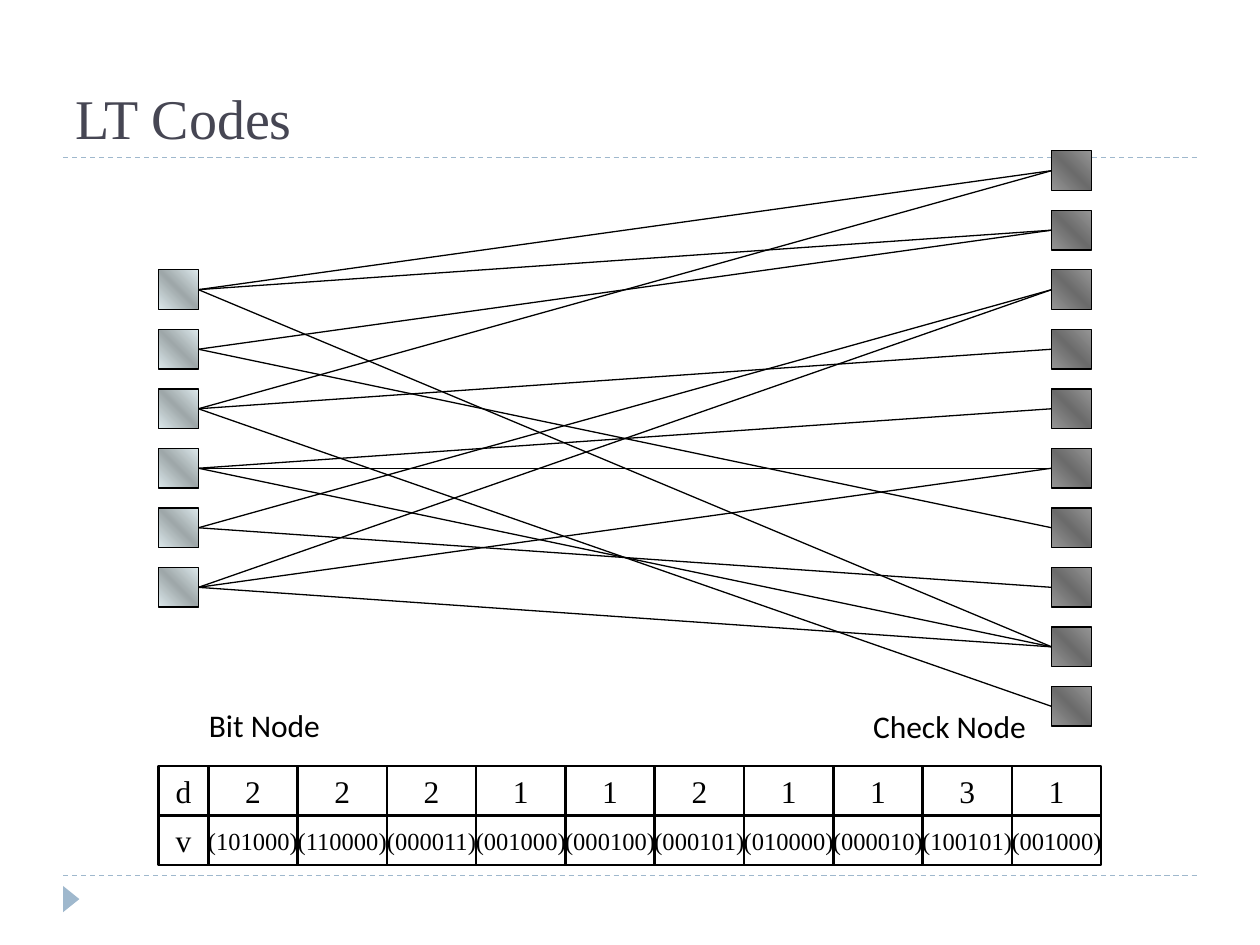
"""Build the LT Codes slide: a bipartite graph and the table that defines its edges."""
import copy

import lxml.etree
import pptx
import pptx.dml.color
import pptx.enum.dml
import pptx.enum.shapes
import pptx.enum.text
import pptx.oxml.ns
import pptx.util

Cm = pptx.util.Cm
Pt = pptx.util.Pt
RGBColor = pptx.dml.color.RGBColor
Shape = pptx.enum.shapes.MSO_SHAPE
Anchor = pptx.enum.text.MSO_ANCHOR
Align = pptx.enum.text.PP_ALIGN

BLACK = RGBColor(0x00, 0x00, 0x00)
TITLE_COLOR = RGBColor(0x46, 0x46, 0x53)
ACCENT = RGBColor(0x9F, 0xB8, 0xCD)
BIT_LIGHT = RGBColor(0xDD, 0xE9, 0xEC)
BIT_DARK = RGBColor(0x9E, 0xA7, 0xA9)
CHECK_LIGHT = RGBColor(0x96, 0x96, 0x96)
CHECK_DARK = RGBColor(0x6B, 0x6B, 0x6B)

SERIF = "Times New Roman"
SANS = "Calibri"

VECTORS = ["101000", "110000", "000011", "001000", "000100",
           "000101", "010000", "000010", "100101", "001000"]
BIT_COUNT = len(VECTORS[0])

BIT_LEFT, CHECK_LEFT = 3.2, 21.2
CHECK_TOP, NODE_PITCH, NODE_SIZE = 3.04, 1.2, 0.8
BIT_TOP = CHECK_TOP + (len(VECTORS) - BIT_COUNT) / 2 * NODE_PITCH
TABLE_TOP, ROW_HEIGHT = 15.44, 1.0
HEAD_WIDTH, COLUMN_WIDTH = 1.0, 1.8


def write_text(shape, text, size, font, color, align, anchor):
    """Put one formatted paragraph into a shape."""
    frame = shape.text_frame
    frame.word_wrap = False
    frame.vertical_anchor = anchor
    para = frame.paragraphs[0]
    para.text = text
    para.alignment = align
    para.font.size = Pt(size)
    para.font.name = font
    para.font.color.rgb = color


def add_label(page, left, top, width, height, text, size=18, font=SANS,
              color=BLACK, anchor=Anchor.TOP):
    """Add a left-aligned text box."""
    box = page.shapes.add_textbox(Cm(left), Cm(top), Cm(width), Cm(height))
    write_text(box, text, size, font, color, Align.LEFT, anchor)


def add_line(page, start=(0, 0), end=(0, 0), color=BLACK):
    """Add a thin straight connector without shadow."""
    ends = [Cm(value) for value in (*start, *end)]
    line = page.shapes.add_connector(pptx.enum.shapes.MSO_CONNECTOR.STRAIGHT, *ends)
    line.line.color.rgb = color
    line.line.width = Pt(0.75)
    lxml.etree.SubElement(line._element.spPr, pptx.oxml.ns.qn("a:effectLst"))
    return line


def add_rule(page, top):
    """Add a dashed horizontal rule across the page."""
    rule = add_line(page, (1.27, top), (24.13, top), ACCENT)
    rule.line.dash_style = pptx.enum.dml.MSO_LINE.DASH


def add_node(page, left, top, light, dark):
    """Add a square node with a dark diagonal band."""
    node = page.shapes.add_shape(Shape.RECTANGLE, Cm(left), Cm(top),
                                 Cm(NODE_SIZE), Cm(NODE_SIZE))
    node.shadow.inherit = False
    node.line.color.rgb = BLACK
    node.line.width = Pt(0.75)
    node.fill.gradient()
    node.fill.gradient_angle = 45
    stops = node._element.spPr.find(".//" + pptx.oxml.ns.qn("a:gsLst"))
    stops.append(copy.deepcopy(stops[0]))
    for stop, position, color in zip(node.fill.gradient_stops, (0, 0.5, 1),
                                     (light, dark, light)):
        stop.position = position
        stop.color.rgb = color
    return node


def add_nodes(page, count, left, top, light, dark):
    """Add a column of evenly spaced nodes."""
    return [add_node(page, left, top + row * NODE_PITCH, light, dark)
            for row in range(count)]


def add_edges(page, bits, checks):
    """Join each check node to the bits that are set in its vector."""
    for check, vector in zip(checks, VECTORS):
        for bit, flag in zip(bits, vector):
            if flag == "1":
                edge = add_line(page)
                edge.begin_connect(bit, 3)
                edge.end_connect(check, 1)


def add_cell(page, left, row, width, text, size=18):
    """Add one outlined cell whose text may reach its borders."""
    cell = page.shapes.add_shape(Shape.RECTANGLE, Cm(left), Cm(TABLE_TOP + row * ROW_HEIGHT),
                                 Cm(width), Cm(ROW_HEIGHT))
    cell.shadow.inherit = False
    cell.fill.background()
    cell.line.color.rgb = BLACK
    cell.line.width = Pt(1.5)
    write_text(cell, text, size, SERIF, BLACK, Align.CENTER, Anchor.MIDDLE)


def add_code_table(page):
    """Add the degree and vector rows."""
    for row, head in enumerate("dv"):
        add_cell(page, BIT_LEFT, row, HEAD_WIDTH, head)
    for column, vector in enumerate(VECTORS):
        left = BIT_LEFT + HEAD_WIDTH + column * COLUMN_WIDTH
        add_cell(page, left, 0, COLUMN_WIDTH, str(vector.count("1")))
        add_cell(page, left, 1, COLUMN_WIDTH, f"({vector})", 14)


def add_page_marker(page):
    """Add the small triangle at the foot of the page."""
    marker = page.shapes.add_shape(Shape.ISOSCELES_TRIANGLE, Cm(1.17), Cm(17.96),
                                   Cm(0.53), Cm(0.33))
    marker.rotation = 90
    marker.shadow.inherit = False
    marker.fill.solid()
    marker.fill.fore_color.rgb = ACCENT
    marker.line.fill.background()


def main():
    """Build and save the deck."""
    deck = pptx.Presentation()
    deck.slide_width, deck.slide_height = Cm(25.4), Cm(19.05)
    page = deck.slides.add_slide(deck.slide_layouts[6])
    add_rule(page, 17.65)
    add_rule(page, 3.17)
    add_page_marker(page)
    add_label(page, 1.27, 0.43, 22.86, 2.74, "LT Codes", 32, SERIF,
              TITLE_COLOR, Anchor.BOTTOM)
    bits = add_nodes(page, BIT_COUNT, BIT_LEFT, BIT_TOP, BIT_LIGHT, BIT_DARK)
    checks = add_nodes(page, len(VECTORS), CHECK_LEFT, CHECK_TOP, CHECK_LIGHT, CHECK_DARK)
    add_edges(page, bits, checks)
    add_code_table(page)
    add_label(page, 3.96, 14.1, 2.9, 1.02, "Bit Node")
    add_label(page, 17.35, 14.12, 3.84, 1.02, "Check Node")
    deck.save("out.pptx")


if __name__ == "__main__":
    main()
